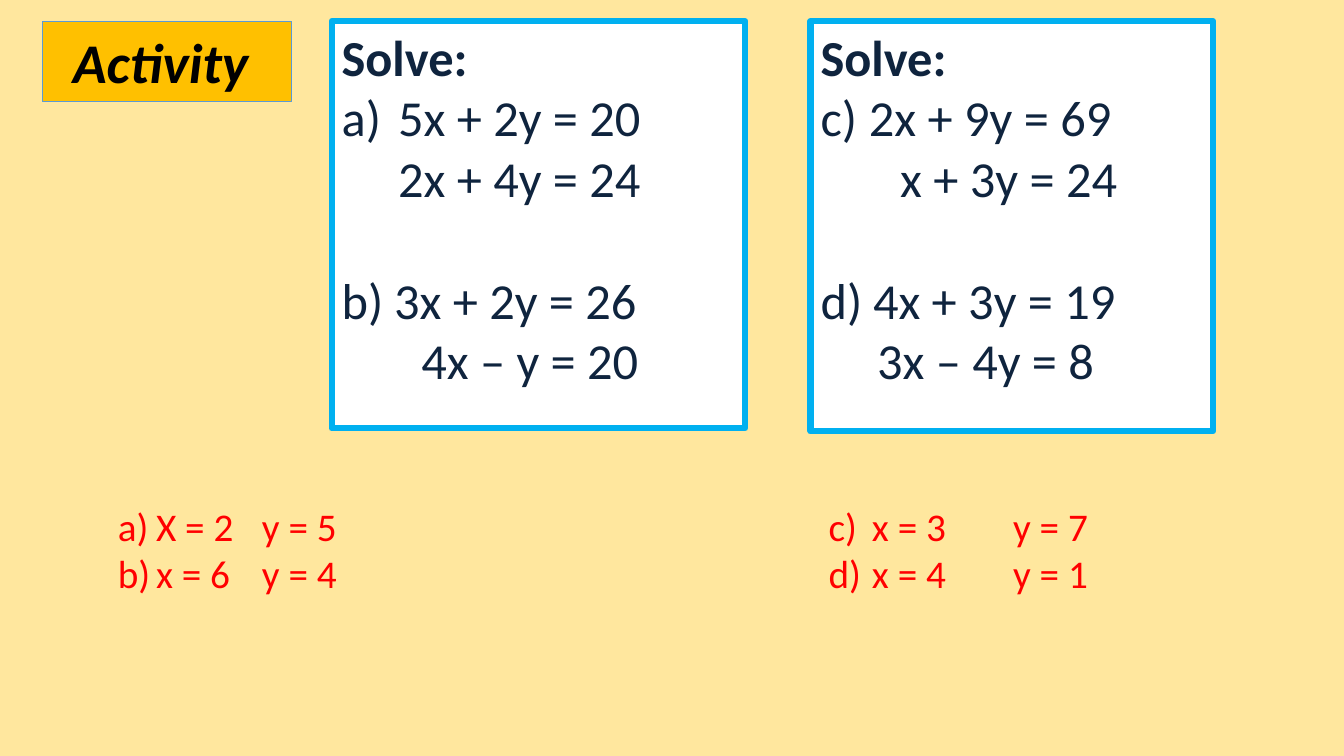
from lxml.etree import SubElement
from pptx import Presentation
from pptx.dml.color import RGBColor
from pptx.enum.shapes import MSO_SHAPE as Shape
from pptx.enum.text import MSO_ANCHOR as Anchor, MSO_AUTO_SIZE as AutoSize, PP_ALIGN as Align
from pptx.oxml.ns import qn
from pptx.util import Inches, Pt

CREAM = RGBColor(0xFF, 0xE7, 0x9E)
AMBER = RGBColor(0xFF, 0xC0, 0x00)
STEEL = RGBColor(0x5B, 0x9B, 0xD5)
SKY = RGBColor(0x00, 0xB0, 0xF0)
NAVY = RGBColor(0x0F, 0x24, 0x3E)
RED = RGBColor(0xFF, 0x00, 0x00)
WHITE = RGBColor(0xFF, 0xFF, 0xFF)
BLACK = RGBColor(0x00, 0x00, 0x00)

LINE_GAP = Pt(44)
ANSWER_STOPS = (0.38, 1.43, 7.05, 7.48, 8.88)


def set_tabs(paragraph, stops):
    tabs = SubElement(paragraph._p.get_or_add_pPr(), qn("a:tabLst"))
    for stop in stops:
        SubElement(tabs, qn("a:tab"), pos=str(Inches(stop)), algn="l")


def set_font(paragraph, size, color, bold=False, italic=False):
    font = paragraph.font
    font.name, font.size = "Calibri", Pt(size)
    font.bold, font.italic = bold, italic
    font.color.rgb = color


def paint(shape, fill, line, width):
    shape.fill.solid()
    shape.fill.fore_color.rgb = fill
    shape.line.color.rgb = line
    shape.line.width = Pt(width)


def add_heading(slide, left, top, width, height):
    heading = slide.shapes.title
    heading.left, heading.top = Inches(left), Inches(top)
    heading.width, heading.height = Inches(width), Inches(height)
    paint(heading, AMBER, STEEL, 0.75)
    frame = heading.text_frame
    frame.text = "Activity "
    frame.auto_size = AutoSize.NONE
    frame.vertical_anchor = Anchor.MIDDLE
    frame.paragraphs[0].alignment = Align.CENTER
    set_font(frame.paragraphs[0], 40, BLACK, bold=True, italic=True)


def add_problems(slide, left, top, width, height, systems):
    card = slide.shapes.add_shape(
        Shape.RECTANGLE, Inches(left), Inches(top), Inches(width), Inches(height))
    card.shadow.inherit = False
    paint(card, WHITE, SKY, 4.5)
    frame = card.text_frame
    frame.word_wrap = True
    frame.vertical_anchor = Anchor.TOP
    prompt = frame.paragraphs[0]
    prompt.text = "Solve:"
    prompt.alignment = Align.LEFT
    set_font(prompt, 36, NAVY, bold=True)
    for index, (label, first, first_at, second, second_at) in enumerate(systems):
        for text, stop, indent in ((f"{label}\t{first}", first_at, 0), (second, None, second_at)):
            equation = frame.add_paragraph()
            equation.text = text
            equation.alignment = Align.LEFT
            if index and stop:
                equation.space_before = LINE_GAP
            if stop:
                set_tabs(equation, [stop])
            equation._p.get_or_add_pPr().set("marL", str(Inches(indent)))
            set_font(equation, 36, NAVY)


def add_answers(slide, left, top, width, height, rows):
    answers = slide.shapes.add_textbox(
        Inches(left), Inches(top), Inches(width), Inches(height))
    frame = answers.text_frame
    frame.word_wrap = True
    frame.text = "\n".join("\t".join(row) for row in rows)
    for paragraph in frame.paragraphs:
        set_tabs(paragraph, ANSWER_STOPS)
        set_font(paragraph, 28, RED)


def main():
    deck = Presentation()
    deck.slide_width, deck.slide_height = Inches(13.33), Inches(7.5)
    slide = deck.slides.add_slide(deck.slide_layouts[5])
    slide.background.fill.solid()
    slide.background.fill.fore_color.rgb = CREAM

    add_heading(slide, 0.42, 0.21, 2.47, 0.8)
    add_problems(slide, 3.29, 0.21, 4.1, 4.04, [
        ("a)", "5x + 2y = 20", 0.56, "2x + 4y = 24", 0.56),
        ("b)", "3x + 2y = 26", 0.52, "4x – y = 20", 0.79),
    ])
    add_problems(slide, 8.04, 0.21, 3.99, 4.07, [
        ("c)", "2x + 9y = 69", 0.48, "x + 3y = 24", 0.79),
        ("d)", "4x + 3y = 19", 0.52, "3x – 4y = 8", 0.56),
    ])
    add_answers(slide, 1.07, 4.93, 10.97, 1.04, [
        ("a)", "X = 2", "y = 5", "c)", "x = 3", "y = 7"),
        ("b)", "x = 6", "y = 4", "d)", "x = 4", "y = 1"),
    ])
    deck.save("out.pptx")


if __name__ == "__main__":
    main()
